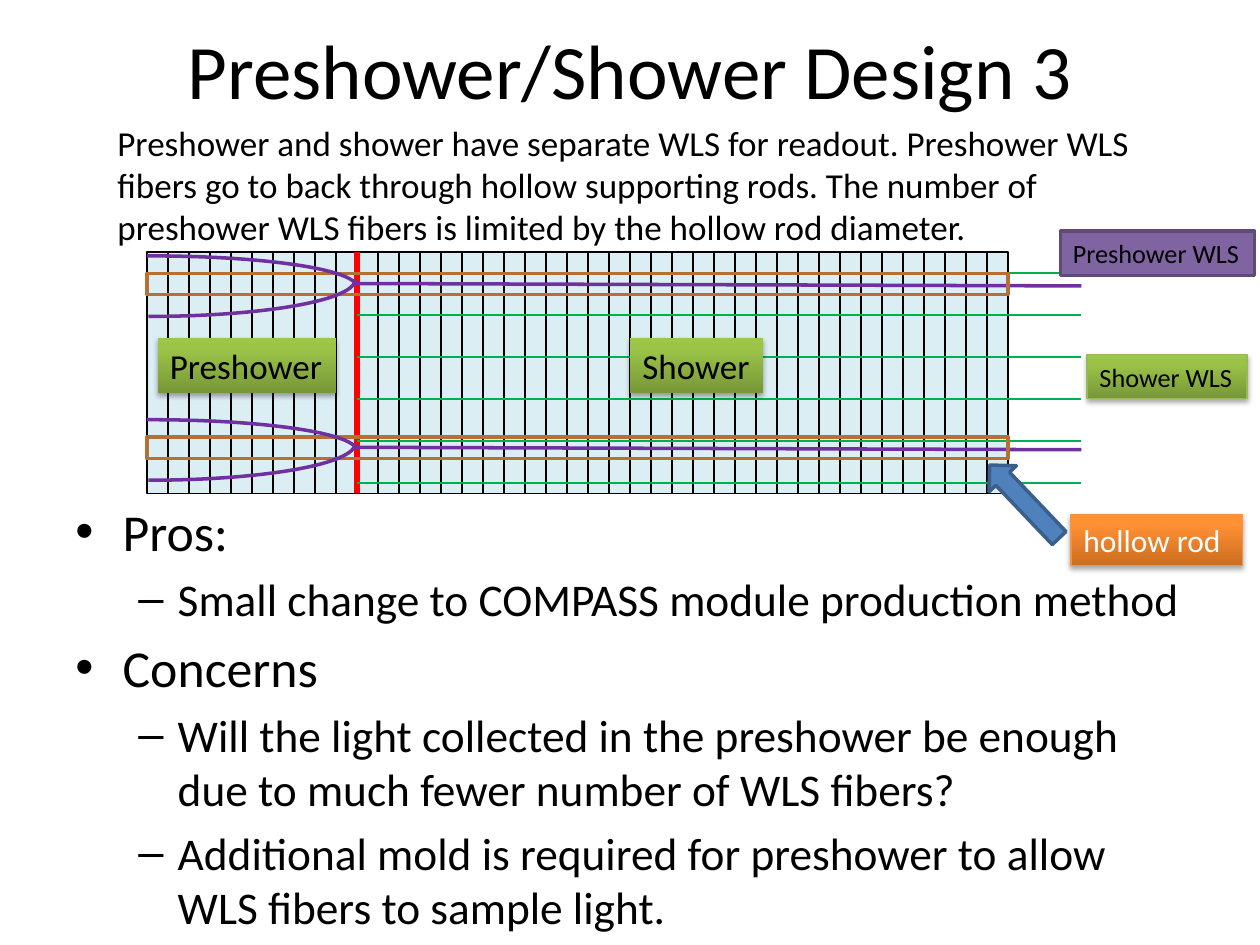
from copy import deepcopy

from lxml.etree import SubElement
from pptx import Presentation
from pptx.dml.color import RGBColor
from pptx.enum.shapes import MSO_CONNECTOR as Link, MSO_SHAPE as Kind
from pptx.enum.text import MSO_ANCHOR as Anchor, PP_ALIGN as Align
from pptx.oxml.ns import qn
from pptx.util import Pt

BLACK = RGBColor(0x00, 0x00, 0x00)
WHITE = RGBColor(0xFF, 0xFF, 0xFF)
RED = RGBColor(0xFF, 0x00, 0x00)
PALE = RGBColor(0xDB, 0xEE, 0xF4)
FIBER = RGBColor(0x00, 0xB0, 0x50)
PURPLE = RGBColor(0x70, 0x30, 0xA0)
LILAC = RGBColor(0x80, 0x64, 0xA2)
PLUM = RGBColor(0x5F, 0x4A, 0x78)
BROWN = RGBColor(0xB7, 0x6F, 0x34)
BLUE = RGBColor(0x4F, 0x81, 0xBD)
NAVY = RGBColor(0x3A, 0x5F, 0x8C)
OLIVE = RGBColor(0x98, 0xB9, 0x55)
AMBER = RGBColor(0xF6, 0x92, 0x40)
GREENS = [RGBColor(0x77, 0x97, 0x37), RGBColor(0x9B, 0xC3, 0x48), RGBColor(0x9D, 0xC7, 0x46)]
ORANGES = [RGBColor(0xCC, 0x6E, 0x20), RGBColor(0xFF, 0x90, 0x34), RGBColor(0xFF, 0x91, 0x36)]

INTRO = (
    "Preshower and shower have separate WLS for readout. Preshower WLS fibers go to back "
    "through hollow supporting rods. The number of preshower WLS fibers is limited by the "
    "hollow rod diameter."
)
POINTS = [
    (0, "Pros:"),
    (1, "Small change to COMPASS module production method"),
    (0, "Concerns"),
    (1, "Will the light collected in the preshower be enough due to much fewer number of "
        "WLS fibers?"),
    (1, "Additional mold is required for preshower to allow WLS fibers to sample light."),
]
# level: bullet, text size, left margin, indent
LEVELS = [("•", 29.6, 27, -27), ("–", 25.9, 58.5, -22.5)]


def write(para, text, size, color=BLACK):
    run = para.add_run()
    run.text = text
    look = {"name": "Calibri", "size": Pt(size)}
    for key, val in look.items():
        setattr(run.font, key, val)
    run.font.color.rgb = color


def add_text(slide, box, anchor=Anchor.TOP):
    frame = slide.shapes.add_textbox(*map(Pt, box)).text_frame
    for key, val in {"word_wrap": True, "vertical_anchor": anchor}.items():
        setattr(frame, key, val)
    return frame


def add_line(slide, start, end, color, width):
    line = slide.shapes.add_connector(Link.STRAIGHT, *map(Pt, start + end))
    line.line.color.rgb = color
    line.line.width = Pt(width)
    SubElement(line._element.spPr, qn("a:effectLst"))


def add_shape(slide, kind, box, fill=None, edge=None, width=0.75, turn=0):
    shape = slide.shapes.add_shape(kind, *map(Pt, box))
    shape.shadow.inherit = False
    shape.rotation = turn
    if fill is None:
        shape.fill.background()
    else:
        shape.fill.solid()
        shape.fill.fore_color.rgb = fill
    if edge is None:
        shape.line.fill.background()
    else:
        shape.line.color.rgb = edge
        shape.line.width = Pt(width)
    return shape


def shade(shape, colors):
    """Fill with a vertical gradient, dark at the bottom, and cast a soft shadow."""
    shape.fill.gradient()
    shape.fill.gradient_angle = 90
    props = shape._element.spPr
    stops = props.find(".//" + qn("a:gsLst"))
    stops.append(deepcopy(stops[-1]))
    for stop, spot, color in zip(shape.fill.gradient_stops, (0, 0.8, 1), colors):
        stop.position = spot
        stop.color.rgb = color
    cast = SubElement(
        props.find(qn("a:effectLst")), qn("a:outerShdw"),
        blurRad=str(Pt(3.1)), dist=str(Pt(1.8)), dir="5400000", rotWithShape="0",
    )
    tint = SubElement(cast, qn("a:srgbClr"), val="000000")
    SubElement(tint, qn("a:alpha"), val="35000")


def add_label(slide, box, text, size, fill, edge=None, width=0.75, color=BLACK):
    """Add a text label; a list of colours as fill gives a shaded one."""
    flat = None if isinstance(fill, list) else fill
    shape = add_shape(slide, Kind.RECTANGLE, box, flat, edge, width)
    if flat is None:
        shade(shape, fill)
    frame = shape.text_frame
    frame.word_wrap = False
    para = frame.paragraphs[0]
    para.alignment = Align.LEFT
    write(para, text, size, color)


def add_title(slide, box):
    para = add_text(slide, box, Anchor.MIDDLE).paragraphs[0]
    para.alignment = Align.CENTER
    write(para, "Preshower/Shower Design 3", 44)


def add_intro(slide, box):
    write(add_text(slide, box).paragraphs[0], INTRO, 20)


def add_stack(slide, box, pitch=12, split=10):
    """Draw the plates, the red divider and the shower fibers."""
    left, top, width, height = box
    add_shape(slide, Kind.RECTANGLE, box, PALE, BLACK)
    for plate in range(1, int(width / pitch)):
        x = left + plate * pitch
        color, thick = (RED, 3) if plate == split else (BLACK, 1)
        add_line(slide, (x, top), (x, top + height), color, thick)
    x = left + split * pitch
    for row in range(6):
        y = top + pitch + 2 * pitch * row
        add_line(slide, (x, y), (x + 414, y), FIBER, 1.5)


def add_rod(slide, box):
    """Draw a hollow rod with the preshower fibers that run into it."""
    left, top, _, _ = box
    add_line(slide, (left + 120, top + 5.8), (left + 534, top + 7.2), PURPLE, 2)
    add_shape(slide, Kind.RECTANGLE, box, edge=BROWN, width=2)
    arcs = [
        (-115, -17.2, 41.8, 107.96, 164.08),
        (-114.2, -10, 35.3, 48.5, 107.72),
    ]
    for dx, dy, height, start, end in arcs:
        place = (left + dx, top + dy, 234, height)
        arc = add_shape(slide, Kind.ARC, place, edge=PURPLE, width=2, turn=180)
        arc.adjustments[0] = start
        arc.adjustments[1] = end


def add_diagram(slide, box):
    left, top, width, height = box
    add_stack(slide, box)
    for row in range(2):
        add_rod(slide, (left, top + 12.2 + 93.6 * row, width, 12.2))
    labels = [
        ((276, 49, 76.3, 31.5), "Shower", 20, GREENS),
        ((6, 49, 102.2, 31.5), "Preshower", 20, GREENS),
        ((537.2, 58.5, 91.4, 25.4), "Shower WLS", 15, GREENS, OLIVE),
        ((522, -12, 110.9, 25.4), "Preshower WLS", 15, LILAC, PLUM, 2),
        ((528, 150, 98.2, 29), "hollow rod", 18, ORANGES, AMBER, 0.75, WHITE),
    ]
    for (x, y, wide, high), *rest in labels:
        add_label(slide, (left + x, top + y, wide, high), *rest)
    place = (left + 490.6, top + 113.8, 21.6, 57.6)
    add_shape(slide, Kind.UP_ARROW, place, BLUE, NAVY, 2, 316.4)


def add_points(slide, box):
    frame = add_text(slide, box)
    for num, (level, text) in enumerate(POINTS):
        para = frame.add_paragraph() if num else frame.paragraphs[0]
        mark, size, margin, indent = LEVELS[level]
        para.level = level
        para.space_before = Pt(round(size * 0.2, 1))
        props = para._p.get_or_add_pPr()
        for key, val in {"marL": margin, "indent": indent}.items():
            props.set(key, str(Pt(val)))
        SubElement(props, qn("a:buFont"), typeface="Arial")
        SubElement(props, qn("a:buChar"), char=mark)
        write(para, text, size)


def main():
    deck = Presentation()
    deck.slide_width, deck.slide_height = Pt(720), Pt(540)
    slide = deck.slides.add_slide(deck.slide_layouts[6])
    add_title(slide, (36, -6, 648, 90))
    add_intro(slide, (60, 66, 624, 80))
    add_diagram(slide, (84, 144, 492, 138))
    add_points(slide, (36, 282, 648, 246))
    deck.save("out.pptx")


if __name__ == "__main__":
    main()
